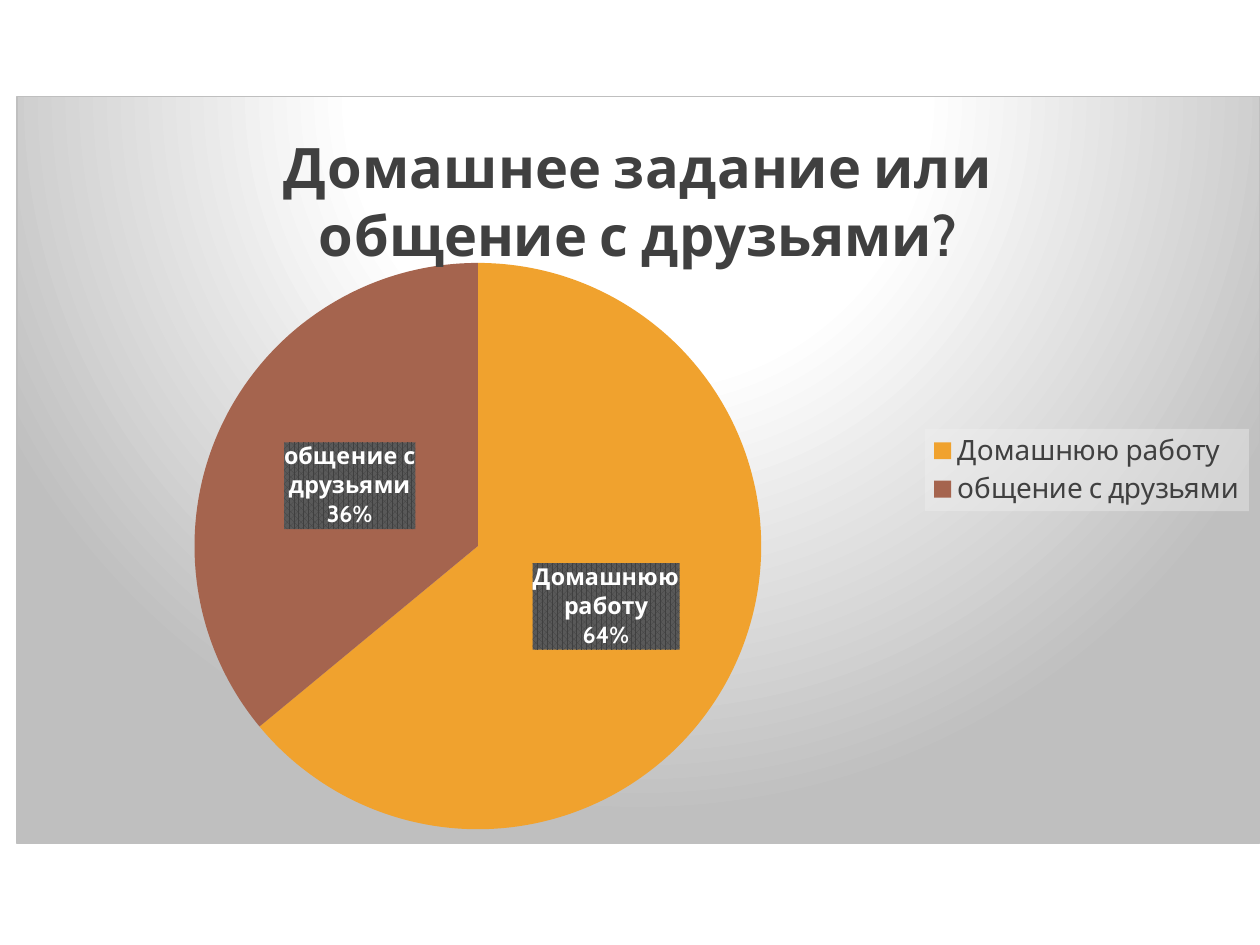
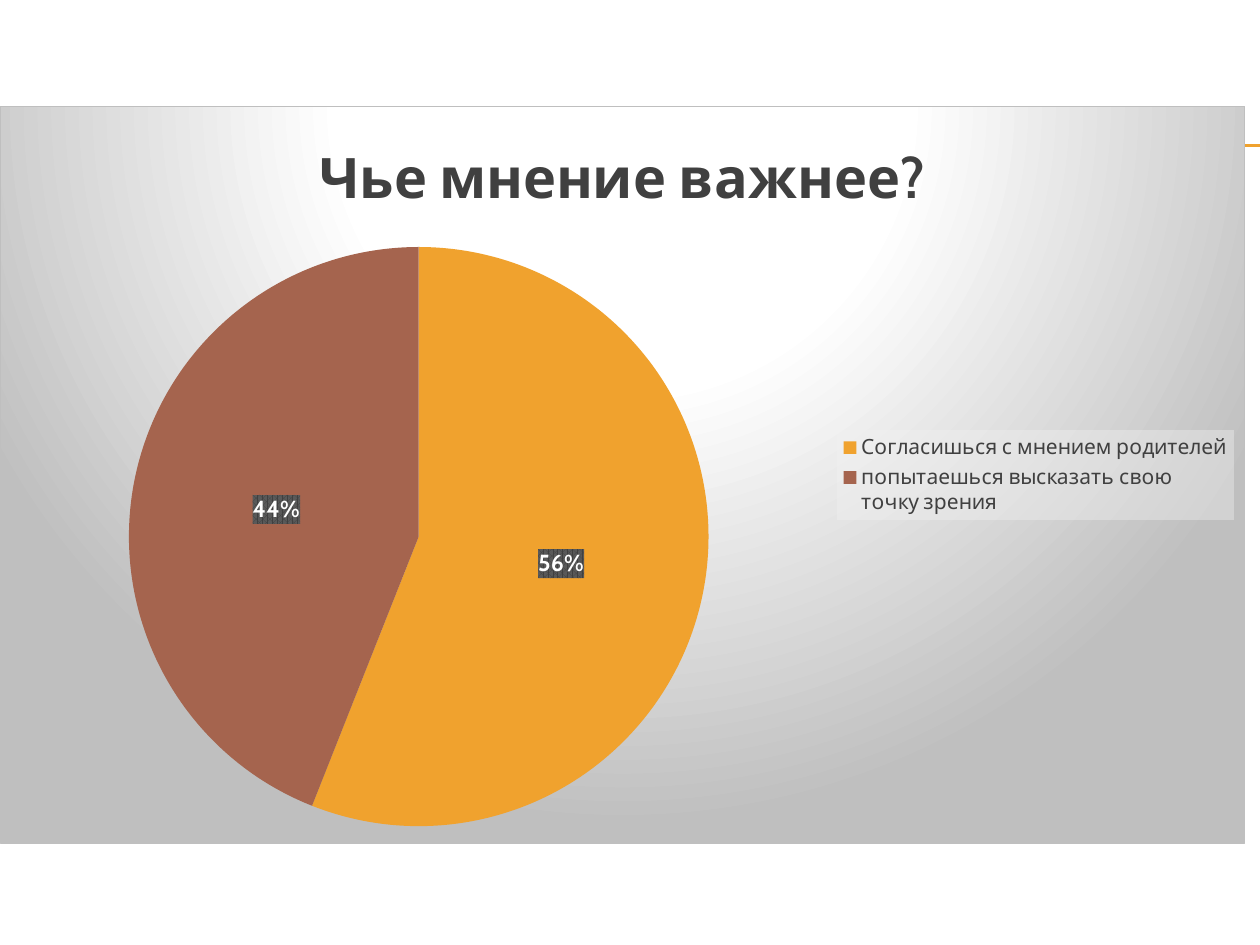
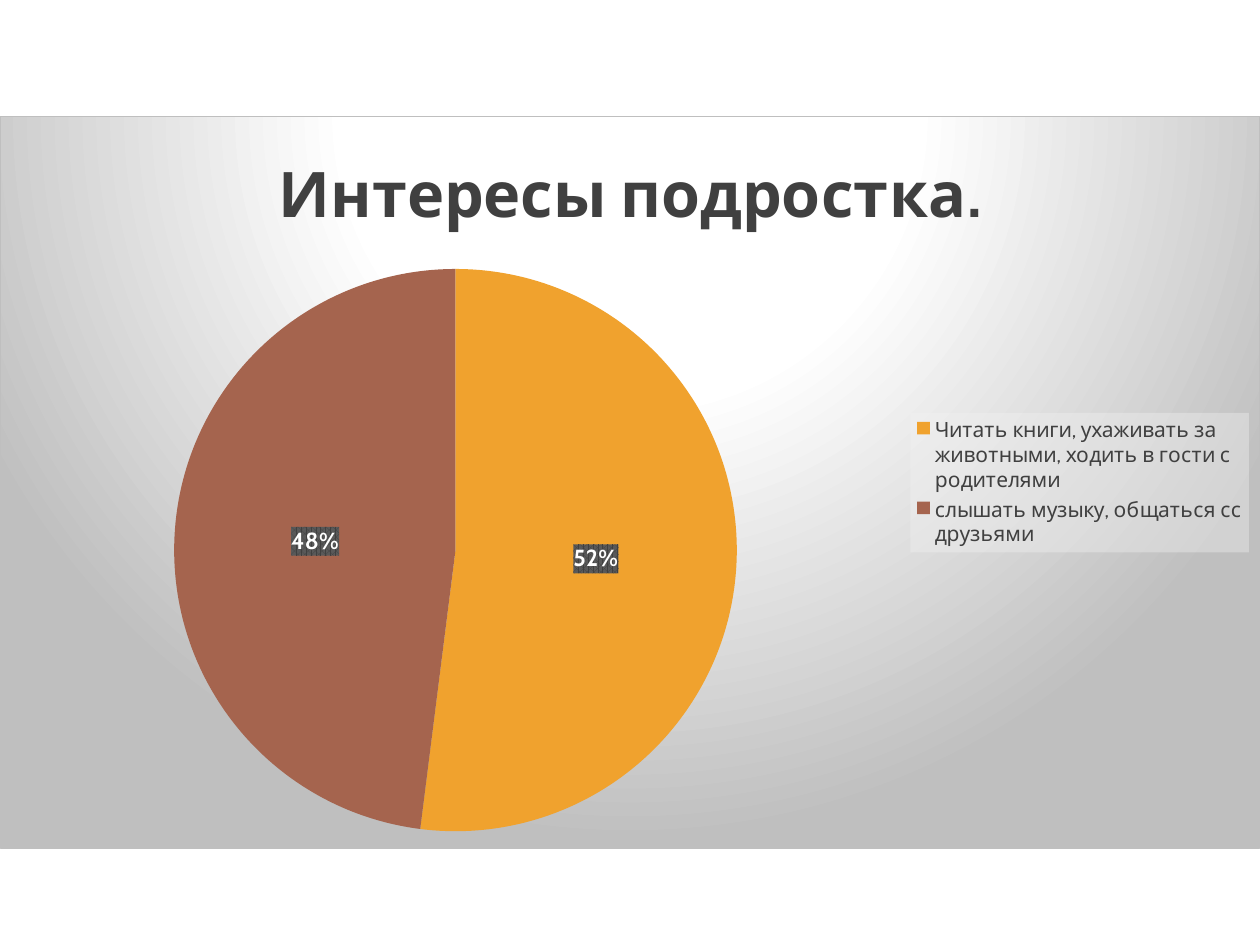
import pptx
import pptx.chart.data
import pptx.dml.color
import pptx.enum.chart
import pptx.enum.shapes
import pptx.oxml
import pptx.oxml.ns
import pptx.util
from pptx.util import Inches

COLORS = {
    "accent": "F0A22E",
    "second": "A5644E",
    "text": "404040",
    "black": "000000",
    "white": "FFFFFF",
    "edge": "BFBFBF",
    "label_front": "404040",
    "label_back": "595959",
    "legend": "F2F2F2",
}
FONT = "Cabin"
RULE_HEIGHTS = (1.15, 1.16)

# Fills for the parts of a chart
PANEL_FILL = f"""
<a:gradFill><a:gsLst>
  <a:gs pos="0"><a:srgbClr val="{COLORS['white']}"/></a:gs>
  <a:gs pos="39000"><a:srgbClr val="{COLORS['white']}"/></a:gs>
  <a:gs pos="100000"><a:srgbClr val="{COLORS['edge']}"/></a:gs>
</a:gsLst><a:path path="circle">
  <a:fillToRect l="50000" t="-80000" r="50000" b="180000"/>
</a:path></a:gradFill>
<a:ln w="9525"><a:solidFill><a:srgbClr val="{COLORS['edge']}"/></a:solidFill></a:ln>"""
LABEL_FILL = f"""
<a:pattFill prst="pct75">
  <a:fgClr><a:srgbClr val="{COLORS['label_front']}"/></a:fgClr>
  <a:bgClr><a:srgbClr val="{COLORS['label_back']}"/></a:bgClr>
</a:pattFill><a:ln><a:noFill/></a:ln>"""
LEGEND_FILL = f"""
<a:solidFill><a:srgbClr val="{COLORS['legend']}"><a:alpha val="39000"/></a:srgbClr></a:solidFill>
<a:ln><a:noFill/></a:ln>"""


def qn(tag):
    return pptx.oxml.ns.qn(tag)


def chart_xml(tag, content):
    namespaces = pptx.oxml.ns.nsdecls("c", "a")
    return pptx.oxml.parse_xml(f"<c:{tag} {namespaces}>{content}</c:{tag}>")


def paint(element, fill):
    """Give a chart element its fill, just ahead of its text properties."""
    element.find(qn("c:txPr")).addprevious(chart_xml("spPr", fill))


class SurveyDeck:
    def __init__(self):
        self.prs = pptx.Presentation()
        self.prs.slide_width, self.prs.slide_height = Inches(10), Inches(7.5)
        self.slide = None

    def color(self, name):
        return pptx.dml.color.RGBColor.from_string(COLORS[name])

    def style(self, font, size, color, bold=False):
        font.name, font.size, font.bold = FONT, pptx.util.Pt(size), bold
        font.color.rgb = self.color(color)

    def new_slide(self):
        self.slide = self.prs.slides.add_slide(self.prs.slide_layouts[6])
        for height in RULE_HEIGHTS:
            self.rule(0.56, height, 10)

    def rule(self, left, top, right):
        line = self.slide.shapes.add_connector(
            pptx.enum.shapes.MSO_CONNECTOR.STRAIGHT,
            Inches(left), Inches(top), Inches(right), Inches(top))
        line.line.color.rgb = self.color("accent")
        line.line.width = pptx.util.Pt(0.75)
        effects = pptx.oxml.parse_xml(f"<a:effectLst {pptx.oxml.ns.nsdecls('a')}/>")
        line.element.spPr.append(effects)

    def pie(self, box, question, title_size, answers, legend_size,
            name_slices=False, plot_box=None):
        data = pptx.chart.data.CategoryChartData()
        data.categories = list(answers)
        data.add_series("Series 1", list(answers.values()))
        chart = self.slide.shapes.add_chart(
            pptx.enum.chart.XL_CHART_TYPE.PIE, *map(Inches, box), data).chart
        self.style(chart.font, 10, "black")
        paint(chart.element, PANEL_FILL)

        # Title
        chart.has_title = True
        heading = chart.chart_title.text_frame.paragraphs[0].add_run()
        heading.text = question
        self.style(heading.font, title_size, "text", bold=True)

        # Legend
        chart.has_legend = True
        chart.legend.position = pptx.enum.chart.XL_LEGEND_POSITION.RIGHT
        chart.legend.include_in_layout = False
        self.style(chart.legend.font, legend_size, "text")
        paint(chart.element.find(".//" + qn("c:legend")), LEGEND_FILL)

        # Slices
        plot = chart.plots[0]
        plot.vary_by_categories = True
        shares = plot.series[0]
        for index, color in enumerate(("accent", "second")):
            fill = shares.points[index].format.fill
            fill.solid()
            fill.fore_color.rgb = self.color(color)

        # Slice labels
        labels = shares.data_labels
        self.style(labels.font, 13.3, "white", bold=True)
        labels.number_format, labels.number_format_is_linked = "0%", False
        labels.position = pptx.enum.chart.XL_LABEL_POSITION.CENTER
        labels.show_value, labels.show_percentage = False, True
        labels.show_category_name = name_slices
        labels_xml = chart.element.find(".//" + qn("c:ser")).find(qn("c:dLbls"))
        paint(labels_xml, LABEL_FILL)
        if name_slices:
            labels_xml.find(qn("c:showBubbleSize")).addnext(chart_xml("separator", "\n"))

        if plot_box:
            self.place_plot(chart, plot_box)

    def place_plot(self, chart, plot_box):
        area = chart.element.find(".//" + qn("c:plotArea"))
        for automatic in area.findall(qn("c:layout")):
            area.remove(automatic)
        sizes = "".join(f'<c:{key} val="{value}"/>' for key, value in zip("xywh", plot_box))
        area.insert(0, chart_xml(
            "layout",
            '<c:manualLayout><c:layoutTarget val="inner"/><c:xMode val="edge"/>'
            f'<c:yMode val="edge"/>{sizes}</c:manualLayout>'))


def main():
    deck = SurveyDeck()

    # Homework or friends
    deck.new_slide()
    deck.pie((0.13, 0.76, 9.87, 5.94), "Домашнее задание или общение с друзьями?", 32,
             {"Домашнюю работу": 64, "общение с друзьями": 36}, 16,
             name_slices=True, plot_box=(0.007, 0.223, 0.728, 0.758))

    # Whose opinion matters more
    deck.new_slide()
    deck.pie((0, 0.84, 9.88, 5.86), "Чье мнение важнее?", 32,
             {"Согласишься с мнением родителей": 56,
              "попытаешься высказать свою точку зрения": 44}, 12)

    # Interests of a teenager
    deck.new_slide()
    deck.pie((0, 0.92, 10, 5.82), "Интересы подростка.", 36,
             {"Читать книги, ухаживать за животными, ходить в гости с родителями": 52,
              "слышать музыку, общаться сс друзьями": 48}, 12)

    deck.prs.save("out.pptx")


if __name__ == "__main__":
    main()
